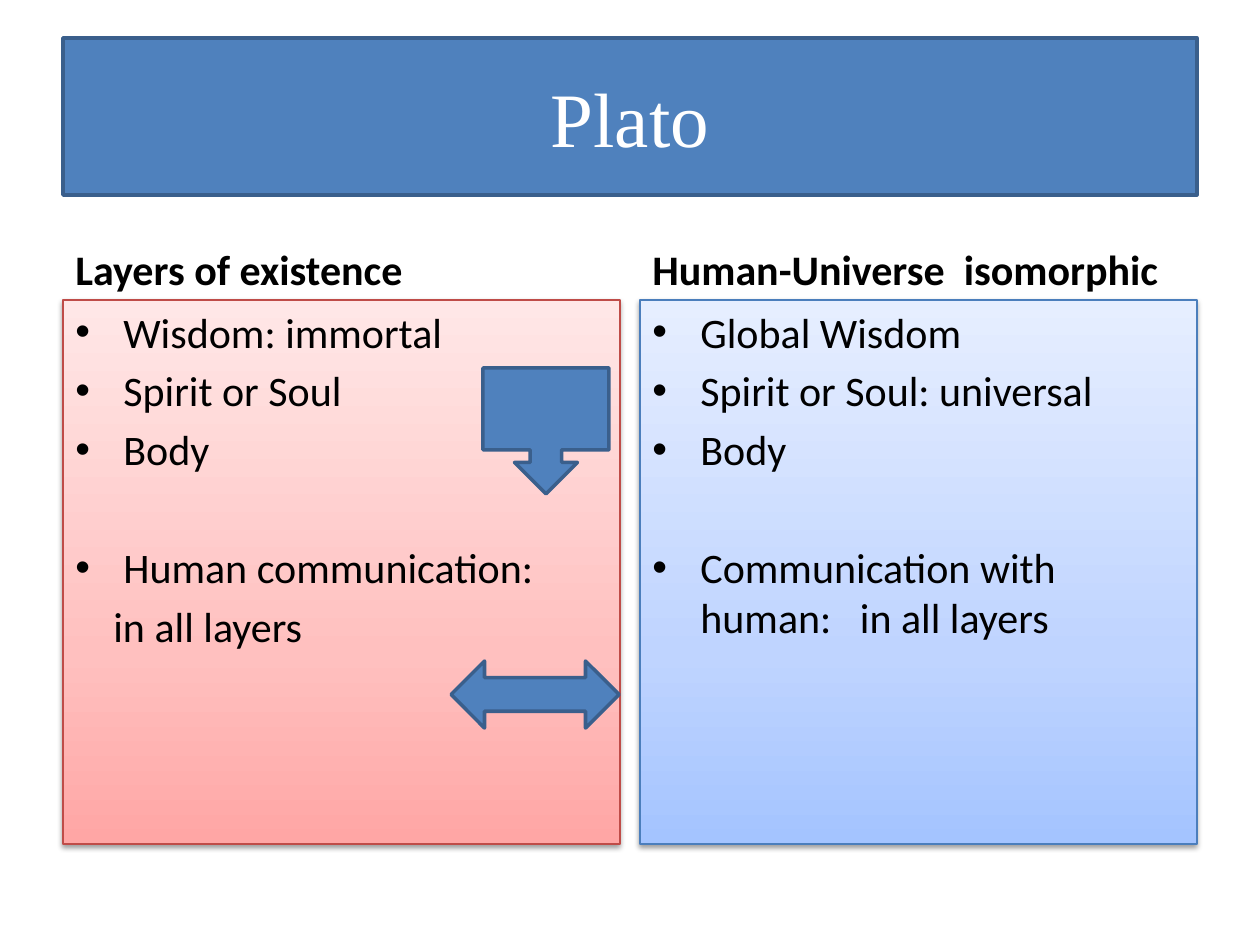
from copy import deepcopy
from dataclasses import dataclass

from lxml import etree
from pptx import Presentation
from pptx.dml.color import RGBColor
from pptx.enum.shapes import MSO_SHAPE
from pptx.enum.text import MSO_ANCHOR, PP_ALIGN
from pptx.oxml.ns import qn
from pptx.util import Pt

RECT = MSO_SHAPE.RECTANGLE
H_ARROW = MSO_SHAPE.LEFT_RIGHT_ARROW
DOWN_CALLOUT = MSO_SHAPE.DOWN_ARROW_CALLOUT
TOP, MIDDLE, BOTTOM = MSO_ANCHOR.TOP, MSO_ANCHOR.MIDDLE, MSO_ANCHOR.BOTTOM
LEFT, CENTER = PP_ALIGN.LEFT, PP_ALIGN.CENTER

BLUE = RGBColor(0x4F, 0x81, 0xBD)
BLUE_EDGE = RGBColor(0x3A, 0x5F, 0x8C)
WHITE = RGBColor(0xFF, 0xFF, 0xFF)
BLACK = RGBColor(0x00, 0x00, 0x00)
RED_LINE = RGBColor(0xBF, 0x4C, 0x48)
RED_STOPS = (RGBColor(0xFF, 0xA6, 0xA5), RGBColor(0xFF, 0xC0, 0xBF), RGBColor(0xFF, 0xE7, 0xE7))
SKY_LINE = RGBColor(0x4B, 0x7E, 0xBC)
SKY_STOPS = (RGBColor(0xA4, 0xC4, 0xFF), RGBColor(0xBF, 0xD4, 0xFF), RGBColor(0xE6, 0xEE, 0xFF))
STOP_POSITIONS = (0, 35, 100)

EMU_PER_PX = 914400 / 126
MARGIN, COLUMN_W, COLUMN_GAP = 63, 557, 20
HEADING_Y, HEADING_H = 212, 88
PANEL_Y, PANEL_H = 300, 544
BULLET_INDENT, PLAIN_INDENT = 48, 38
LINE_GAP, GROUP_GAP = 4.8, 38.5


@dataclass(frozen=True)
class Item:
    text: str
    bullet: bool = True
    gap: float = LINE_GAP


@dataclass(frozen=True)
class Column:
    heading: str
    items: tuple[Item, ...]
    stops: tuple[RGBColor, ...]
    line: RGBColor


COLUMNS = (
    Column(
        "Layers of existence",
        (
            Item("Wisdom: immortal"),
            Item("Spirit or Soul"),
            Item("Body"),
            Item("Human communication:", gap=GROUP_GAP),
            Item("in all layers", bullet=False),
        ),
        RED_STOPS,
        RED_LINE,
    ),
    Column(
        "Human-Universe  isomorphic",
        (
            Item("Global Wisdom"),
            Item("Spirit or Soul: universal"),
            Item("Body"),
            Item("Communication with human:   in all layers", gap=GROUP_GAP),
        ),
        SKY_STOPS,
        SKY_LINE,
    ),
)


def px(n: int) -> int:
    return round(n * EMU_PER_PX)


def add_box(slide, kind, x: int, y: int, w: int, h: int, line: RGBColor, width: float):
    s = slide.shapes.add_shape(kind, px(x), px(y), px(w), px(h))
    s.shadow.inherit = False
    s.fill.solid()
    s.fill.fore_color.rgb = BLUE
    s.line.color.rgb = line
    s.line.width = Pt(width)
    return s


def style_paragraph(p, name: str, size: int, color: RGBColor, align=LEFT, bold: bool = False) -> None:
    p.alignment = align
    p.font.name = name
    p.font.size = Pt(size)
    p.font.color.rgb = color
    p.font.bold = bold


def set_frame(s, anchor):
    tf = s.text_frame
    tf.word_wrap = True
    tf.vertical_anchor = anchor
    return tf


def set_gradient(s, stops: tuple[RGBColor, ...]) -> None:
    s.fill.gradient()
    s.fill.gradient_angle = 90
    gs_list = s.element.spPr.find(".//" + qn("a:gsLst"))
    gs_list.insert(1, deepcopy(gs_list[0]))
    for stop, color, position in zip(s.fill.gradient_stops, stops, STOP_POSITIONS):
        stop.color.rgb = color
        stop.position = position / 100


def add_shadow(s) -> None:
    effects = s.element.spPr.find(qn("a:effectLst"))
    shadow = etree.SubElement(
        effects, qn("a:outerShdw"), blurRad=str(Pt(3.1)), dist=str(Pt(1.6)),
        dir="5400000", rotWithShape="0",
    )
    color = etree.SubElement(shadow, qn("a:srgbClr"), val=str(BLACK))
    etree.SubElement(color, qn("a:alpha"), val="38000")


def set_indent(p, bullet: bool) -> None:
    props = p._p.get_or_add_pPr()
    props.set("marL", str(px(BULLET_INDENT if bullet else PLAIN_INDENT)))
    props.set("indent", str(px(-BULLET_INDENT) if bullet else 0))
    if bullet:
        etree.SubElement(props, qn("a:buFont"), typeface="Arial")
        etree.SubElement(props, qn("a:buChar"), char="•")


def add_title(slide, text: str) -> None:
    s = add_box(slide, RECT, MARGIN, 38, 1134, 157, BLUE_EDGE, 2)
    p = set_frame(s, MIDDLE).paragraphs[0]
    p.text = text
    style_paragraph(p, "Times New Roman", 44, WHITE, CENTER)


def add_column(slide, x: int, column: Column) -> None:
    heading = slide.shapes.add_textbox(px(x), px(HEADING_Y), px(COLUMN_W), px(HEADING_H))
    p = set_frame(heading, BOTTOM).paragraphs[0]
    p.text = column.heading
    style_paragraph(p, "Calibri", 24, BLACK, bold=True)

    panel = add_box(slide, RECT, x, PANEL_Y, COLUMN_W, PANEL_H, column.line, 0.75)
    set_gradient(panel, column.stops)
    add_shadow(panel)
    tf = set_frame(panel, TOP)
    for i, item in enumerate(column.items):
        p = tf.add_paragraph() if i else tf.paragraphs[0]
        p.text = item.text
        p.space_before = Pt(item.gap)
        set_indent(p, item.bullet)
        style_paragraph(p, "Calibri", 24, BLACK)


def main() -> None:
    prs = Presentation()
    prs.slide_width, prs.slide_height = px(1260), px(945)
    slide = prs.slides.add_slide(prs.slide_layouts[6])
    add_title(slide, "Plato")
    for i, column in enumerate(COLUMNS):
        add_column(slide, MARGIN + i * (COLUMN_W + COLUMN_GAP), column)
    add_box(slide, H_ARROW, 451, 661, 168, 67, BLUE_EDGE, 2)
    add_box(slide, DOWN_CALLOUT, 483, 368, 126, 126, BLUE_EDGE, 2)
    prs.save("out.pptx")


if __name__ == "__main__":
    main()
